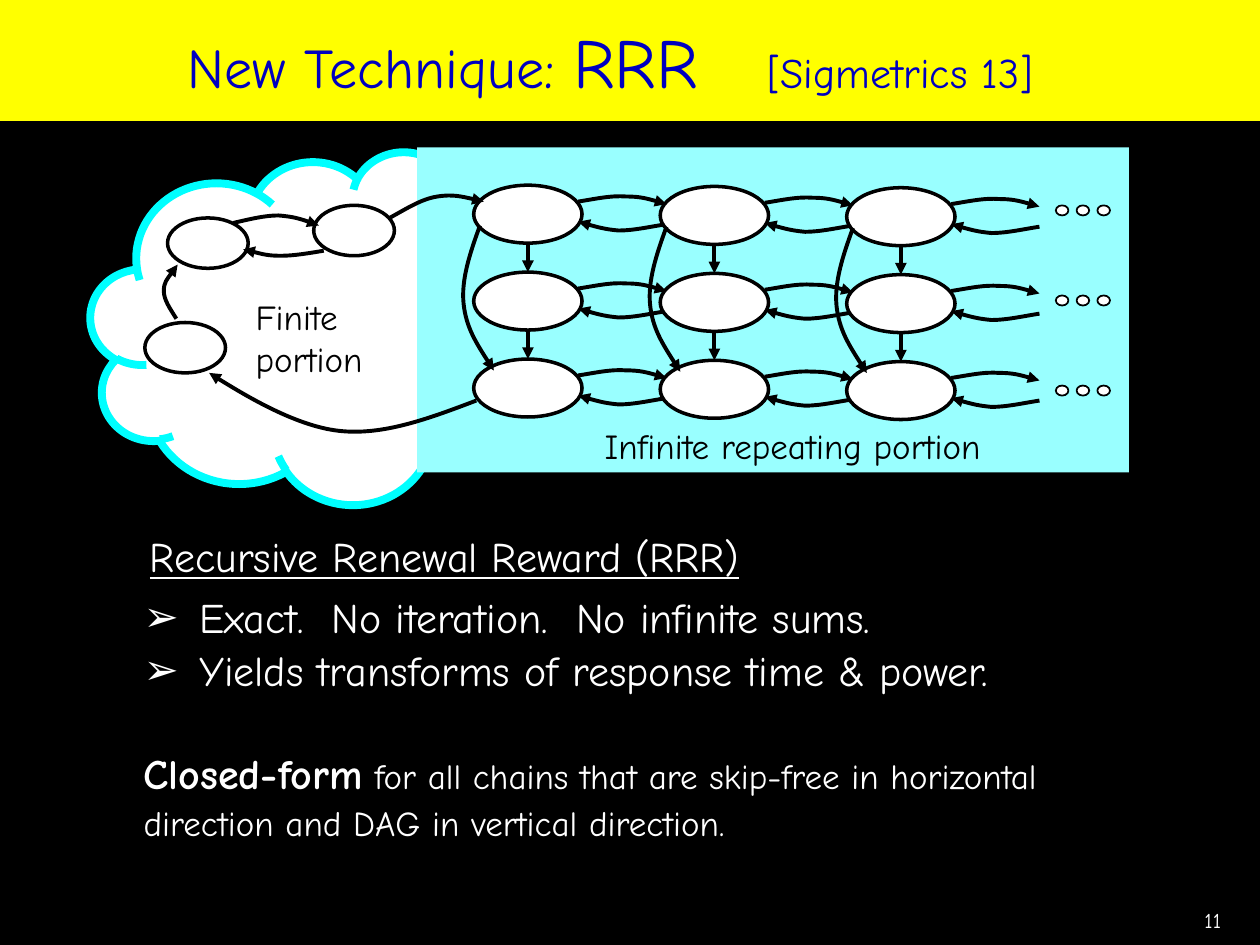
from dataclasses import dataclass

from pptx import Presentation
from pptx.dml.color import RGBColor
from pptx.enum.shapes import MSO_CONNECTOR as Connector, MSO_SHAPE as Preset
from pptx.enum.text import MSO_ANCHOR as Anchor, MSO_AUTO_SIZE as AutoSize, PP_ALIGN as Align
from pptx.oxml import parse_xml
from pptx.oxml.ns import nsdecls
from pptx.util import Inches, Pt


@dataclass(frozen=True)
class Theme:
    font: str = "Comic Neue"
    black: str = "000000"
    white: str = "FFFFFF"
    band: str = "FFFF00"
    title: str = "0000BF"
    cloud_line: str = "00FFFF"
    panel: str = "99FFFF"
    title_size: int = 32
    emphasis_size: int = 40
    body_size: int = 24
    label_size: int = 20
    number_size: int = 12


THEME = Theme()

# Control points, in inches from the top left of a state in the repeating grid
FORWARD = [(0.83, 0.13), (0.96, 0.11), (1.09, 0.08), (1.21, 0.09), (1.32, 0.09), (1.43, 0.12), (1.53, 0.15)]
BACKWARD = [(1.53, 0.31), (1.4, 0.33), (1.27, 0.36), (1.15, 0.36), (1.04, 0.35), (0.93, 0.32), (0.83, 0.29)]
SKIP_ROW = [(0.05, 0.32), (-0.03, 0.54), (-0.1, 0.75), (-0.08, 0.94), (-0.06, 1.13), (0.05, 1.3), (0.16, 1.47)]
# From the top left of the finite portion
FINITE_ARROWS = [
    [(1.13, 0.57), (1.26, 0.54), (1.38, 0.51), (1.49, 0.51), (1.61, 0.52), (1.71, 0.55), (1.81, 0.59)],
    [(1.85, 0.79), (1.73, 0.81), (1.61, 0.83), (1.51, 0.83), (1.4, 0.83), (1.3, 0.8), (1.21, 0.78)],
    [(0.68, 1.33), (0.63, 1.25), (0.58, 1.18), (0.58, 1.11), (0.58, 1.04), (0.64, 0.97), (0.69, 0.9)],
]
# From the top left of the whole chain
ENTER = [(2.37, 0.56), (2.5, 0.49), (2.62, 0.41), (2.75, 0.39), (2.87, 0.37), (3, 0.4), (3.12, 0.43)]
RETURN = [(3.06, 2.01), (2.69, 2.15), (2.32, 2.29), (1.97, 2.25), (1.61, 2.21), (0.98, 1.82), (0.94, 1.79)]


def rgb(color):
    return RGBColor.from_string(color)


def write(paragraph, text, size=THEME.body_size, color=THEME.white, bold=False, underline=False):
    run = paragraph.add_run()
    run.text = text
    font = run.font
    font.name, font.size, font.bold, font.underline = THEME.font, Pt(size), bold, underline
    font.color.rgb = rgb(color)


def add_label(slide, box, lines, size=THEME.label_size, color=THEME.black, align=Align.LEFT, wrap=False):
    frame = slide.shapes.add_textbox(*map(Inches, box)).text_frame
    frame.word_wrap = wrap
    for index, line in enumerate(lines):
        paragraph = frame.add_paragraph() if index else frame.paragraphs[0]
        paragraph.alignment = align
        write(paragraph, line, size, color)
    return frame


def add_preset(slide, preset, box, fill=THEME.white, line=THEME.black, width=2):
    shape = slide.shapes.add_shape(preset, *map(Inches, box))
    shape.shadow.inherit = False
    shape.fill.solid()
    shape.fill.fore_color.rgb = rgb(fill)
    if line:
        shape.line.color.rgb = rgb(line)
        shape.line.width = Pt(width)
    else:
        shape.line.fill.background()


def style_arrow(shape):
    shape.line.color.rgb = rgb(THEME.black)
    shape.line.width = Pt(2.25)
    shape.line._get_or_add_ln().append(parse_xml(f'<a:tailEnd {nsdecls("a")} type="triangle"/>'))
    shape._element.spPr.append(parse_xml(f'<a:effectLst {nsdecls("a")}/>'))


def add_curve(slide, left, top, controls):
    """Draw an arrow along cubic Bézier control points given relative to (left, top)."""
    points = [(Inches(left + x), Inches(top + y)) for x, y in controls]
    builder = slide.shapes.build_freeform(*points[0])
    builder.add_line_segments(points[1:], close=False)
    shape = builder.convert_to_shape()
    segments = shape._element.xpath(".//a:path/a:lnTo")
    for start in range(0, len(segments), 3):
        cubic = parse_xml(f'<a:cubicBezTo {nsdecls("a")}/>')
        segments[start].addprevious(cubic)
        for segment in segments[start:start + 3]:
            cubic.append(segment[0])
            segment.getparent().remove(segment)
    shape.fill.background()
    style_arrow(shape)


def add_down_arrow(slide, x, top, bottom):
    style_arrow(slide.shapes.add_connector(
        Connector.STRAIGHT, Inches(x), Inches(top), Inches(x), Inches(bottom)))


def place(shape, box):
    shape.left, shape.top, shape.width, shape.height = map(Inches, box)


def add_title(slide, box):
    title = slide.shapes.title
    place(title, box)
    title.fill.solid()
    title.fill.fore_color.rgb = rgb(THEME.band)
    frame = title.text_frame
    frame.auto_size, frame.vertical_anchor = AutoSize.NONE, Anchor.MIDDLE
    frame.margin_left = Inches(1.49)
    paragraph = frame.paragraphs[0]
    paragraph.alignment = Align.LEFT
    paragraph._p.get_or_add_pPr().append(parse_xml(
        f'<a:tabLst {nsdecls("a")}><a:tab pos="{Inches(4.6)}" algn="l"/></a:tabLst>'))
    write(paragraph, "New Technique: ", THEME.title_size, THEME.title)
    write(paragraph, "RRR", THEME.emphasis_size, THEME.title)
    write(paragraph, "\t[Sigmetrics 13]", THEME.body_size, THEME.title)


def add_body(slide, box):
    body = slide.placeholders[1]
    place(body, box)
    frame = body.text_frame
    frame.auto_size, frame.vertical_anchor = AutoSize.NONE, Anchor.TOP
    # Each line: space before, left margin, bullet, runs
    lines = [
        (0, 0.55, None, [("Recursive Renewal Reward (RRR)", {"underline": True})]),
        (6, 0.94, "➢", [("Exact.  No iteration.  No infinite sums.", {})]),
        (1.5, 0.94, "➢", [("Yields transforms of response time & power.", {})]),
        (30, 0.5, None, [("Closed-form", {"bold": True}),
                         (" for all chains that are skip-free in horizontal", {"size": THEME.label_size})]),
        (2, 0.5, None, [("direction and DAG in vertical direction.", {"size": THEME.label_size})]),
    ]
    for index, (space, margin, bullet, runs) in enumerate(lines):
        paragraph = frame.add_paragraph() if index else frame.paragraphs[0]
        paragraph.space_before = Pt(space)
        properties = paragraph._p.get_or_add_pPr()
        properties.set("marL", str(Inches(margin)))
        properties.set("indent", str(Inches(-0.44 if bullet else 0)))
        if bullet:
            properties.append(parse_xml(
                f'<a:buClr {nsdecls("a")}><a:srgbClr val="{THEME.white}"/></a:buClr>'))
        mark = f'buChar char="{bullet}"' if bullet else "buNone"
        tag, _, attributes = mark.partition(" ")
        properties.append(parse_xml(f'<a:{tag} {nsdecls("a")} {attributes}/>'))
        for text, style in runs:
            write(paragraph, text, **style)


def add_finite_portion(slide, left, top):
    add_preset(slide, Preset.CLOUD, (left, top, 4.07, 2.8), line=THEME.cloud_line, width=4.5)
    for x, y in [(0.61, 0.53), (0.43, 1.36), (1.77, 0.43)]:
        add_preset(slide, Preset.OVAL, (left + x, top + y, 0.64, 0.4))
    for controls in FINITE_ARROWS:
        add_curve(slide, left, top, controls)
    add_label(slide, (left + 1.21, top + 1.1, 1.14, 0.77), ["Finite", "portion"])


def add_repeating_portion(slide, left, top):
    rows = columns = 3
    state_width, state_height, row_pitch, column_pitch = 0.86, 0.46, 0.69, 1.48
    for column in range(columns):
        x = left + 0.45 + column * column_pitch
        y = top + 0.3 + column * 0.01
        tops = [y + row * row_pitch for row in range(rows)]
        for state_top in tops:
            add_preset(slide, Preset.OVAL, (x, state_top, state_width, state_height))
        for upper, lower in zip(tops, tops[1:]):
            add_down_arrow(slide, x + state_width / 2, upper + state_height, lower)
        for state_top in tops:
            add_curve(slide, x, state_top, FORWARD)
            add_curve(slide, x, state_top, BACKWARD)
        add_curve(slide, x, y, SKIP_ROW)
    for row in range(rows):
        for dot in range(3):
            add_preset(slide, Preset.OVAL,
                       (left + 5.07 + dot * 0.165, top + 0.46 + row * 0.715, 0.1, 0.08), width=1)
    add_label(slide, (left + 1.39, top + 2.15, 3.59, 0.44), ["Infinite repeating portion"])


def add_chain(slide, left, top):
    add_finite_portion(slide, left, top + 0.03)
    add_preset(slide, Preset.RECTANGLE, (left + 2.59, top, 5.65, 2.58), THEME.panel, line=None)
    add_repeating_portion(slide, left + 2.59, top)
    add_curve(slide, left, top, ENTER)
    add_curve(slide, left, top, RETURN)


def main():
    presentation = Presentation()
    presentation.slide_width, presentation.slide_height = Inches(10), Inches(7.5)
    slide = presentation.slides.add_slide(presentation.slide_layouts[1])
    slide.background.fill.solid()
    slide.background.fill.fore_color.rgb = rgb(THEME.black)
    add_title(slide, (0, 0, 10, 0.96))
    add_body(slide, (0.54, 4.16, 9.16, 2.54))
    add_chain(slide, 0.72, 1.17)
    number = add_label(slide, (7.46, 7.1, 2.33, 0.4), ["11"], THEME.number_size, THEME.white, Align.RIGHT, wrap=True)
    number.vertical_anchor = Anchor.MIDDLE
    presentation.save("out.pptx")


if __name__ == "__main__":
    main()
